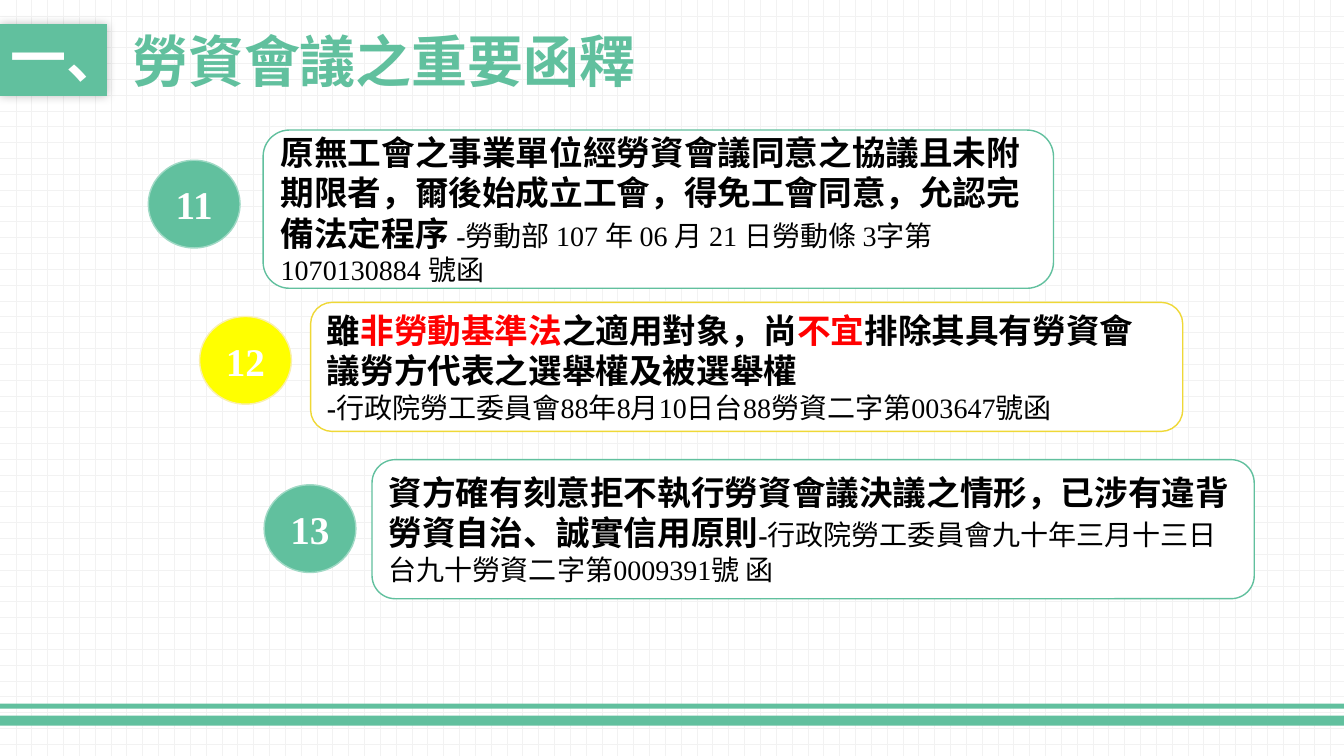
from collections import namedtuple
from dataclasses import dataclass

from lxml import etree
from pptx import Presentation
from pptx import util as u
from pptx.dml import color
from pptx.enum import dml, shapes, text
from pptx.oxml import ns


@dataclass(frozen=True)
class Theme:
    green: str = "61C09E"
    pale_green: str = "A0D9C5"
    yellow: str = "FFFF00"
    gold: str = "EFD836"
    pale_gold: str = "F9EFAF"
    red: str = "FF0000"
    black: str = "000000"
    white: str = "FFFFFF"
    grid: str = "F2F2F2"
    heading_pt: int = 40
    number_pt: int = 28
    ruling_pt: int = 24
    source_pt: int = 20
    sans: str = "Noto Sans CJK SC"
    serif: str = "Times New Roman"


THEME = Theme()
WIDTH, HEIGHT = u.Inches(13.33), u.Inches(7.5)

# Boxes are given in percent of the slide's width and height
Box = namedtuple("Box", "left top width height")
Ruling = namedtuple("Ruling", "number box indent drop fill ring border paras")
BADGE_WIDTH, BADGE_HEIGHT = 6.83, 11.6


def rgb(value):
    return color.RGBColor.from_string(value)


def emu(box):
    return [round(share * side / 100)
            for share, side in zip(box, (WIDTH, HEIGHT, WIDTH, HEIGHT))]


def add_span(para, words, size, ink, bold=True, font=THEME.serif):
    span = para.add_run()
    span.text = words
    span.font.size = u.Pt(size)
    span.font.bold = bold
    span.font.name = font
    span.font.color.rgb = rgb(ink)
    east_asian = etree.SubElement(span.font._element, ns.qn("a:ea"))
    east_asian.set("typeface", THEME.sans)


def add_figure(page, kind, box, fill, line=None):
    figure = page.shapes.add_shape(kind, *emu(box))
    figure.shadow.inherit = False
    figure.fill.solid()
    figure.fill.fore_color.rgb = rgb(fill)
    if line:
        figure.line.color.rgb = rgb(line)
        figure.line.width = u.Pt(1)
    else:
        figure.line.fill.background()
    return figure


def fill_placeholder(holder, box, words, ink, wrap):
    holder.left, holder.top, holder.width, holder.height = emu(box)
    frame = holder.text_frame
    frame.auto_size = text.MSO_AUTO_SIZE.NONE
    frame.word_wrap = wrap
    frame.vertical_anchor = text.MSO_ANCHOR.MIDDLE
    para = frame.paragraphs[0]
    para.alignment = text.PP_ALIGN.LEFT
    para.space_before = u.Pt(10)
    add_span(para, words, THEME.heading_pt, ink, font=THEME.sans)
    return para


def add_soft_shadow(shape):
    effects = etree.SubElement(shape._element.spPr, ns.qn("a:effectLst"))
    shadow = etree.SubElement(effects, ns.qn("a:outerShdw"),
                              blurRad=str(u.Pt(7)), dist="0", dir="0")
    tint = etree.SubElement(shadow, ns.qn("a:srgbClr"), val=THEME.black)
    etree.SubElement(tint, ns.qn("a:alpha"), val="25000")


def add_heading(page, box):
    """Chapter tag on the left, title on the rest of the box."""
    tag_width, gap = 7.95, 1.13
    tag = page.placeholders[1]
    para = fill_placeholder(tag, box._replace(width=tag_width), "一、",
                            THEME.white, wrap=False)
    para.line_spacing = 0.9
    properties = para._p.get_or_add_pPr()
    properties.set("marL", "0")
    properties.set("indent", "0")
    etree.SubElement(properties, ns.qn("a:buNone"))
    tag.fill.solid()
    tag.fill.fore_color.rgb = rgb(THEME.green)
    add_soft_shadow(tag)

    title_box = box._replace(left=box.left + tag_width + gap,
                             width=box.width - tag_width - gap)
    fill_placeholder(page.shapes.title, title_box, "勞資會議之重要函釋",
                     THEME.green, wrap=True)


def add_footer(page, box):
    """Thin bar over a thick bar."""
    thin, thick = 0.67, 1.33
    for top, height in ((box.top, thin),
                        (box.top + box.height - thick, thick)):
        add_figure(page, shapes.MSO_SHAPE.RECTANGLE,
                   box._replace(top=top, height=height), THEME.green)


def add_ruling(page, ruling):
    """Round number badge beside a card with the ruling and its source."""
    box = ruling.box
    card_box = box._replace(left=box.left + ruling.indent,
                            width=box.width - ruling.indent)
    card = add_figure(page, shapes.MSO_SHAPE.ROUNDED_RECTANGLE, card_box,
                      THEME.white, ruling.border)
    frame = card.text_frame
    for index, spans in enumerate(ruling.paras):
        para = frame.add_paragraph() if index else frame.paragraphs[0]
        para.alignment = text.PP_ALIGN.LEFT
        for span in spans:
            add_span(para, *span)

    badge_box = Box(box.left, box.top + ruling.drop, BADGE_WIDTH, BADGE_HEIGHT)
    badge = add_figure(page, shapes.MSO_SHAPE.OVAL, badge_box,
                       ruling.fill, ruling.ring)
    para = badge.text_frame.paragraphs[0]
    para.alignment = text.PP_ALIGN.CENTER
    add_span(para, ruling.number, THEME.number_pt, THEME.white)


def strong(words, ink=THEME.black):
    return words, THEME.ruling_pt, ink


def source(words):
    return [("-", THEME.source_pt, THEME.black),
            (words, THEME.source_pt, THEME.black, False)]


RULINGS = [
    Ruling("11", Box(11.03, 17.2, 67.36, 20.93), 8.55, 4,
           THEME.green, THEME.pale_green, THEME.green,
           [[strong("原無工會之事業單位經勞資會議同意之協議且未附期限者，"
                    "爾後始成立工會，得免工會同意，允認完備法定程序 "),
             *source("勞動部 107 年 06 月 21 日勞動條 3字第 1070130884 號函")]]),
    Ruling("12", Box(14.85, 40, 73.15, 17.07), 8.26, 1.87,
           THEME.yellow, THEME.pale_gold, THEME.gold,
           [[strong("雖"), strong("非勞動基準法", THEME.red),
             strong("之適用對象，尚"), strong("不宜", THEME.red),
             strong("排除其具有勞資會議勞方代表之選舉權及被選舉權")],
            source("行政院勞工委員會88年8月10日台88勞資二字第003647號函")]),
    Ruling("13", Box(19.65, 60.8, 73.67, 18.4), 8.03, 3.33,
           THEME.green, THEME.pale_green, THEME.green,
           [[strong("資方確有刻意拒不執行勞資會議決議之情形，"
                    "已涉有違背勞資自治、誠實信用原則"),
             *source("行政院勞工委員會九十年三月十三日"
                     "台九十勞資二字第0009391號 函")]]),
]


def main():
    deck = Presentation()
    deck.slide_width, deck.slide_height = WIDTH, HEIGHT
    page = deck.slides.add_slide(deck.slide_layouts[1])

    # Background grid
    backdrop = page.background.fill
    backdrop.patterned()
    backdrop.pattern = dml.MSO_PATTERN.DOTTED_GRID
    backdrop.fore_color.rgb = rgb(THEME.grid)
    backdrop.back_color.rgb = rgb(THEME.white)

    add_footer(page, Box(0, 93.07, 100, 2.93))
    add_heading(page, Box(0, 3.2, 61.89, 9.47))
    for ruling in RULINGS:
        add_ruling(page, ruling)

    deck.save("out.pptx")


if __name__ == "__main__":
    main()
